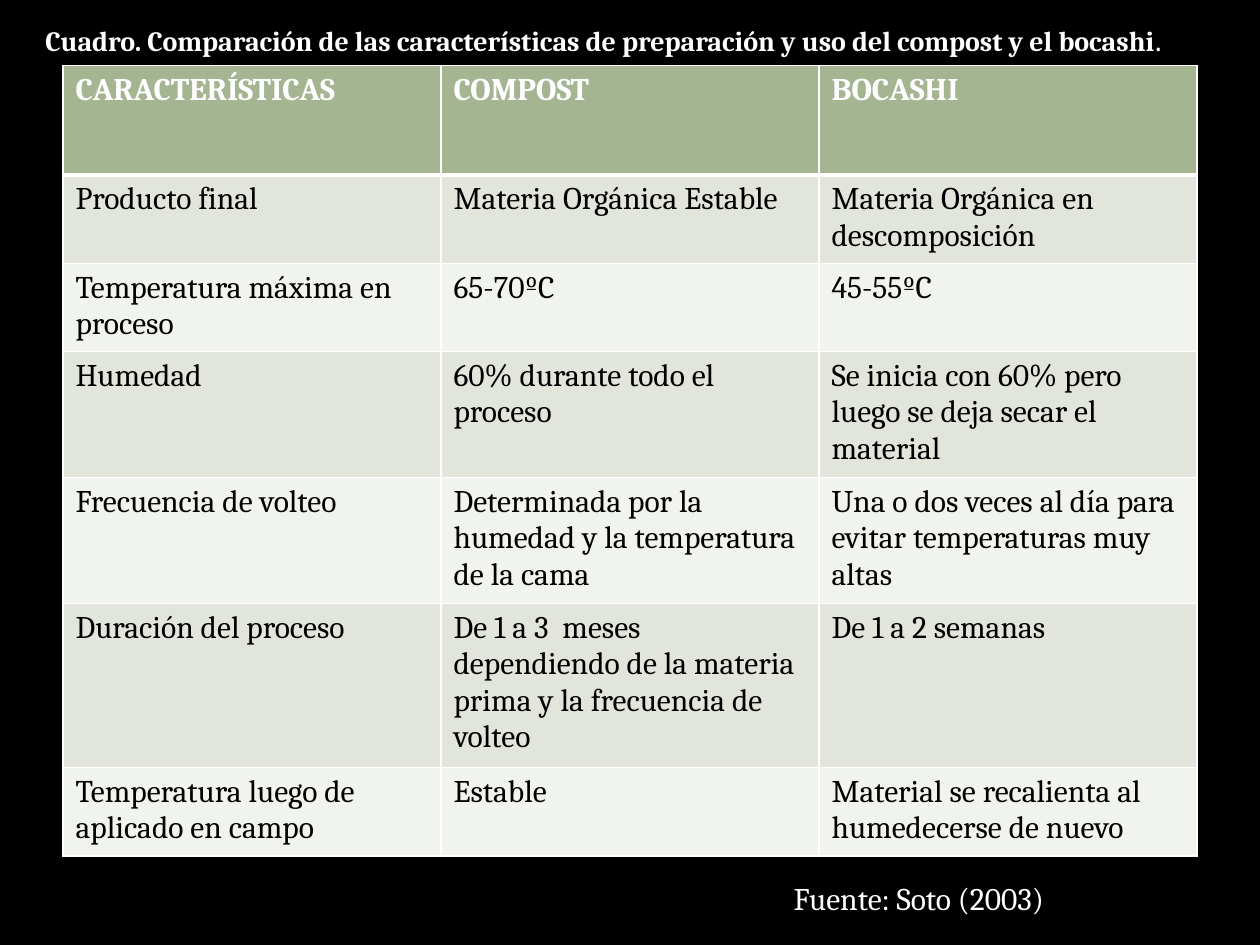
from lxml import etree
from pptx import Presentation
from pptx.dml.color import RGBColor
from pptx.enum.text import MSO_ANCHOR, MSO_AUTO_SIZE, PP_ALIGN
from pptx.oxml.ns import qn
from pptx.util import Inches, Pt

LEFT = PP_ALIGN.LEFT
TOP = MSO_ANCHOR.TOP
GROW = MSO_AUTO_SIZE.SHAPE_TO_FIT_TEXT
FONT = "Cambria"
COLORS = {
    "back": "000000",
    "light": "FFFFFF",
    "dark": "000000",
    "head": "A5B592",
    "odd": "E1E5DC",
    "even": "F0F3EE",
}
ROWS = [
    ("CARACTERÍSTICAS", "COMPOST", "BOCASHI"),
    ("Producto final", "Materia Orgánica Estable",
     "Materia Orgánica en descomposición"),
    ("Temperatura máxima en proceso", "65-70ºC", "45-55ºC"),
    ("Humedad", "60% durante todo el proceso",
     "Se inicia con 60% pero luego se deja secar el material"),
    ("Frecuencia de volteo",
     "Determinada por la humedad y la temperatura de la cama",
     "Una o dos veces al día para evitar temperaturas muy altas"),
    ("Duración del proceso",
     "De 1 a 3  meses dependiendo de la materia prima y la frecuencia de volteo",
     "De 1 a 2 semanas"),
    ("Temperatura luego de aplicado en campo", "Estable",
     "Material se recalienta al humedecerse de nuevo"),
]


def color(name):
    return RGBColor.from_string(COLORS[name])


def add_run(para, text, size, tone, bold=False):
    run = para.add_run()
    run.text = text
    font = run.font
    font.name, font.size, font.bold = FONT, Pt(size), bold
    font.color.rgb = color(tone)


def set_line(shape, box, runs):
    shape.left, shape.top, shape.width, shape.height = map(Inches, box)
    frame = shape.text_frame
    frame.word_wrap = False
    frame.auto_size = GROW
    frame.vertical_anchor = TOP
    para = frame.paragraphs[0]
    para.alignment = LEFT
    para.line_spacing = 1.0
    para.space_before = Pt(0)
    for text, size, bold in runs:
        add_run(para, text, size, "light", bold)


def add_title(slide, box):
    set_line(slide.shapes.title, box, [
        ("Cuadro. Comparación de las características de preparación "
         "y uso del compost y el bocashi", 16, True),
        (".", 18, False),
    ])


def add_source(slide, box):
    note = slide.shapes.add_textbox(*map(Inches, box))
    set_line(note, box, [("Fuente: Soto (2003)", 18, False)])


def set_edges(cell, base):
    props = cell._tc.get_or_add_tcPr()
    widths = {"a:lnL": 1, "a:lnR": 1, "a:lnT": 1, "a:lnB": base}
    for spot, (tag, width) in enumerate(widths.items()):
        line = etree.Element(qn(tag), w=str(Pt(width)))
        fill = etree.SubElement(line, qn("a:solidFill"))
        etree.SubElement(fill, qn("a:srgbClr"), val=COLORS["light"])
        props.insert(spot, line)


def add_grid(slide, box):
    frame = slide.shapes.add_table(len(ROWS), len(ROWS[0]), *map(Inches, box))
    table = frame.table
    for row, texts in enumerate(ROWS):
        head = row == 0
        table.rows[row].height = Inches(0.87 if head else 0.41)
        shade = "head" if head else "odd" if row % 2 else "even"
        for col, text in enumerate(texts):
            cell = table.cell(row, col)
            cell.fill.solid()
            cell.fill.fore_color.rgb = color(shade)
            set_edges(cell, 3 if head else 1)
            if row == 1:
                cell._tc.tcPr.find(qn("a:lnT")).set("w", str(Pt(3)))
            para = cell.text_frame.paragraphs[0]
            add_run(para, text, 18, "light" if head else "dark", head)
    frame.height = Inches(box[3])


def main():
    deck = Presentation()
    deck.slide_width, deck.slide_height = Inches(10), Inches(7.5)
    slide = deck.slides.add_slide(deck.slide_layouts[5])
    back = slide.background.fill
    back.solid()
    back.fore_color.rgb = color("back")
    add_grid(slide, (0.5, 0.52, 9, 6.27))
    add_source(slide, (6.2, 6.93, 2.32, 0.4))
    add_title(slide, (0.26, 0.11, 9.68, 0.4))
    deck.save("out.pptx")


if __name__ == "__main__":
    main()
